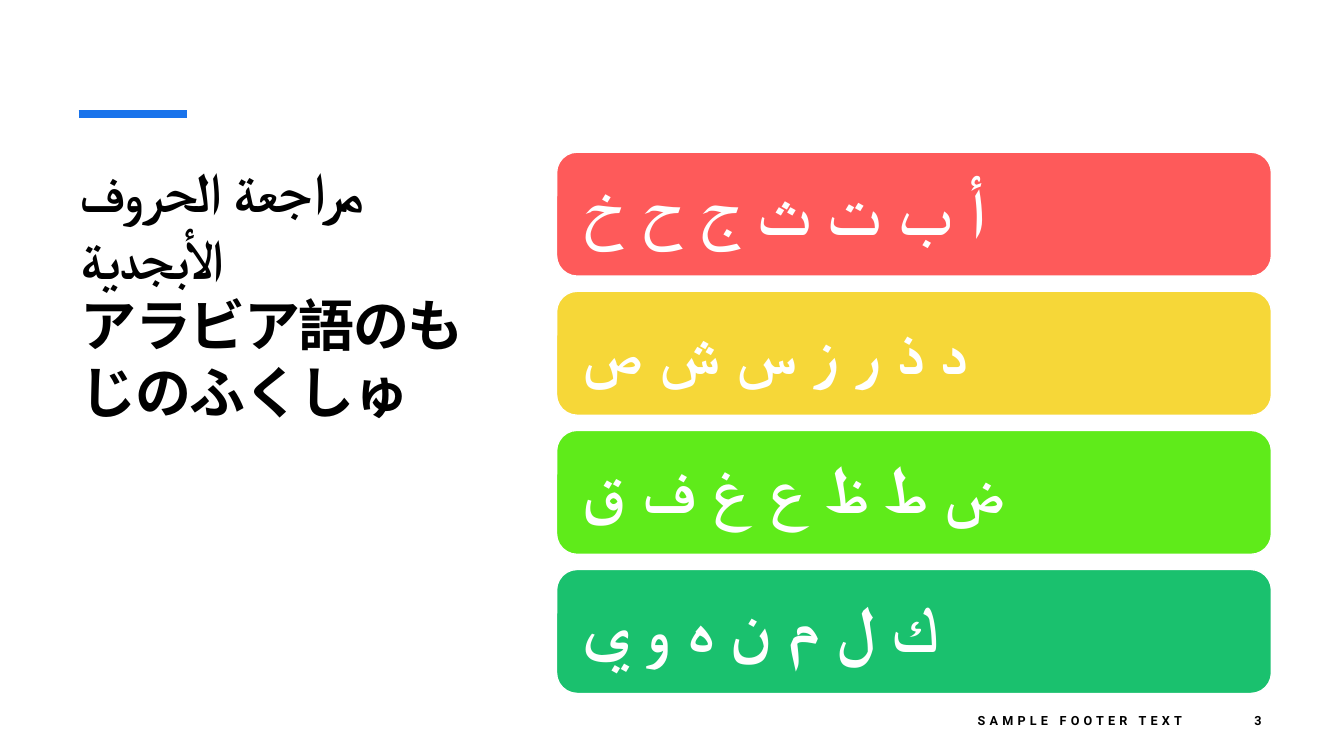
from dataclasses import dataclass

from lxml import etree
from pptx import Presentation
from pptx.dml.color import RGBColor
from pptx.enum.shapes import MSO_CONNECTOR, MSO_SHAPE
from pptx.enum.text import MSO_ANCHOR, PP_ALIGN
from pptx.oxml.ns import qn
from pptx.util import Inches, Pt

STRAIGHT = MSO_CONNECTOR.STRAIGHT
ROUNDED = MSO_SHAPE.ROUNDED_RECTANGLE
TOP, MIDDLE = MSO_ANCHOR.TOP, MSO_ANCHOR.MIDDLE
LEFT, RIGHT = PP_ALIGN.LEFT, PP_ALIGN.RIGHT


@dataclass(frozen=True)
class Theme:
    font: str = "Roboto"
    ink: str = "000000"
    paper: str = "FFFFFF"
    accent: str = "1973EB"
    title_size: int = 40
    letter_size: int = 47
    footer_size: int = 9


theme = Theme()


def color(code):
    return RGBColor.from_string(code)


def write(shape, text, size, ink, align, anchor, after, tracking=0):
    frame = shape.text_frame
    frame.text = text
    frame.word_wrap = True
    frame.vertical_anchor = anchor
    para = frame.paragraphs[0]
    para.alignment = align
    para.space_after = Pt(after)
    for span in para.runs:
        span.font.name = theme.font
        span.font.size = Pt(size)
        span.font.bold = True
        span.font.color.rgb = color(ink)
        properties = span.font._element
        properties.set("spc", str(tracking * 100))
        for script in ("a:ea", "a:cs"):
            etree.SubElement(properties, qn(script)).set("typeface", theme.font)
    return para


deck = Presentation()
deck.slide_width = Inches(13.33)
deck.slide_height = Inches(7.5)
page = deck.slides.add_slide(deck.slide_layouts[5])

title = page.shapes.title
title.left, title.top = Inches(0.7), Inches(1.5)
title.width, title.height = Inches(4.02), Inches(4.29)
write(title, "مراجعة الحروف الأبجدية\vアラビア語のもじのふくしゅ",
      theme.title_size, theme.ink, LEFT, TOP, 6, -1)
title.text_frame.auto_size = None

accent = page.shapes.add_connector(
    STRAIGHT, Inches(0.78), Inches(1.13), Inches(1.85), Inches(1.13))
accent.line.color.rgb = color(theme.accent)
accent.line.width = Pt(6)
etree.SubElement(accent._element.spPr, qn("a:effectLst"))

footers = [("SAMPLE FOOTER TEXT", 7.4, 4.42), ("3", 11.82, 0.79)]
for text, left, width in footers:
    box = page.shapes.add_textbox(
        Inches(left), Inches(6.95), Inches(width), Inches(0.4))
    write(box, text, theme.footer_size, theme.ink, RIGHT, MIDDLE, 6, 3)

letter_rows = [
    ("أ ب ت ث ج ح خ", "FE5A5A"),
    ("د ذ ر ز س ش ص", "F6D738"),
    ("ض ط ظ ع غ ف ق", "5FEB1A"),
    ("ك ل م ن ه و ي", "1AC16E"),
]
for index, (letters, fill) in enumerate(letter_rows):
    card = page.shapes.add_shape(
        ROUNDED, Inches(5.52), Inches(1.51 + 1.38 * index),
        Inches(7.09), Inches(1.23))
    card.shadow.inherit = False
    card.fill.solid()
    card.fill.fore_color.rgb = color(fill)
    card.line.color.rgb = color(theme.paper)
    card.line.width = Pt(1)
    frame = card.text_frame
    frame.margin_left = frame.margin_right = Inches(0.2)
    frame.margin_top = frame.margin_bottom = Inches(0.2)
    para = write(card, letters, theme.letter_size, theme.paper, LEFT, MIDDLE, 16)
    para.line_spacing = 0.9

deck.save("out.pptx")
